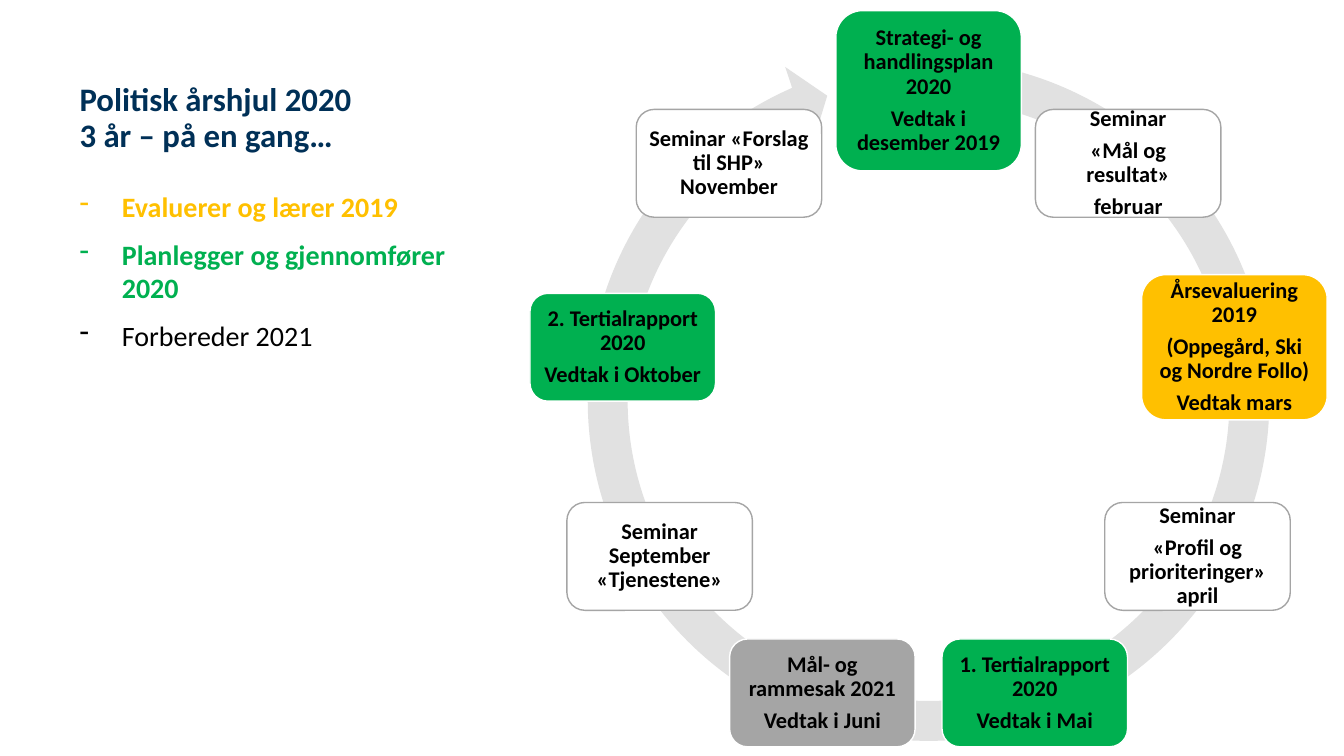
import math
from lxml import etree
from pptx import Presentation
from pptx import util as u
from pptx.dml.color import RGBColor
from pptx.enum import shapes, text
from pptx.oxml import ns

WIDTH, HEIGHT = 13.33, 7.5
FONT = "Calibri"
COLORS = {
    "navy": "003057", "yellow": "FFC000", "green": "00B050", "gray": "A5A5A5",
    "ring": "E1E1E1", "black": "000000", "white": "FFFFFF",
}
TITLE = ["Politisk årshjul 2020", "3 år – på en gang…"]
GOALS = [
    ("Evaluerer og lærer 2019", "yellow", True),
    ("Planlegger og gjennomfører 2020", "green", True),
    ("Forbereder 2021", "black", False),
]
CARD_WIDTH, CARD_HEIGHT = 1.84, 1.07
# Clockwise from the top: fill, height, paragraphs
MILESTONES = [
    ("green", 1.59, ["Strategi- og handlingsplan 2020", "Vedtak i desember 2019"]),
    ("white", CARD_HEIGHT, ["Seminar", "«Mål og resultat»", "februar"]),
    ("yellow", 1.44, ["Årsevaluering 2019", "(Oppegård, Ski og Nordre Follo)", "Vedtak mars"]),
    ("white", CARD_HEIGHT, ["Seminar", "«Profil og prioriteringer» april"]),
    ("green", CARD_HEIGHT, ["1. Tertialrapport 2020", "Vedtak i Mai"]),
    ("gray", CARD_HEIGHT, ["Mål- og rammesak 2021", "Vedtak i Juni"]),
    ("white", CARD_HEIGHT, ["Seminar September «Tjenestene»"]),
    ("green", CARD_HEIGHT, ["2. Tertialrapport 2020", "Vedtak i Oktober"]),
    ("white", CARD_HEIGHT, ["Seminar «Forslag til SHP» November"]),
]


def color(name):
    return RGBColor.from_string(COLORS[name])


def add_span(para, words, size, shade, bold=True):
    span = para.add_run()
    span.text = words
    span.font.name = FONT
    span.font.size = u.Pt(size)
    span.font.bold = bold
    span.font.color.rgb = color(shade)


def paragraphs(frame, items):
    """Pair each item with a paragraph, starting with the one already there."""
    for index, item in enumerate(items):
        yield (frame.add_paragraph() if index else frame.paragraphs[0]), item


def add_box(page, left, top, width, height):
    box = page.shapes.add_textbox(*map(u.Inches, (left, top, width, height)))
    box.text_frame.word_wrap = True
    return box.text_frame


def add_shape(page, kind, left, top, width, height, fill):
    shape = page.shapes.add_shape(kind, *map(u.Inches, (left, top, width, height)))
    shape.shadow.inherit = False
    shape.fill.solid()
    shape.fill.fore_color.rgb = color(fill)
    return shape


def add_title(page, left, top, width, height):
    frame = add_box(page, left, top, width, height)
    frame.vertical_anchor = text.MSO_ANCHOR.BOTTOM
    para = frame.paragraphs[0]
    para.line_spacing = 0.9
    for index, line in enumerate(TITLE):
        if index:
            para.add_line_break()
        add_span(para, line, 23.4, "navy")


def add_goals(page, left, top, width, height):
    frame = add_box(page, left, top, width, height)
    for para, (words, shade, bold) in paragraphs(frame, GOALS):
        # Hanging dash bullet
        props = para._p.get_or_add_pPr()
        props.set("marL", str(u.Inches(0.42)))
        props.set("indent", str(u.Inches(-0.42)))
        etree.SubElement(props, ns.qn("a:buChar")).set("char", "-")
        if para is not frame.paragraphs[0] and words != GOALS[0][0]:
            para.space_before = u.Pt(10)
        add_span(para, words, 20, shade, bold)


def add_card(page, left, top, width, height, fill, lines):
    card = add_shape(page, shapes.MSO_SHAPE.ROUNDED_RECTANGLE,
                     left, top, width, height, fill)
    card.line.color.rgb = color("gray" if fill == "white" else "white")
    card.line.width = u.Pt(1)
    frame = card.text_frame
    frame.word_wrap = True
    frame.vertical_anchor = text.MSO_ANCHOR.MIDDLE
    frame.margin_left = frame.margin_right = u.Inches(0.07)
    frame.margin_top = frame.margin_bottom = u.Inches(0.07)
    for para, line in paragraphs(frame, lines):
        para.alignment = text.PP_ALIGN.CENTER
        para.line_spacing = 0.9
        para.space_after = u.Pt(5.6)
        add_span(para, line, 16, "black")


def add_year_wheel(page, left, top, size):
    # Ring with arrowhead
    ring = add_shape(page, shapes.MSO_SHAPE.CIRCULAR_ARROW, left, top, size, size, "ring")
    ring.line.fill.background()
    for index, value in enumerate([0.055, 3.31, 147.65, 168.09, 0.058]):
        ring.adjustments[index] = value

    # Milestones evenly spaced around the ring
    center_x, center_y = left + size / 2, top + size / 2 + 0.01
    radius = 3.08
    for index, (fill, height, lines) in enumerate(MILESTONES):
        angle = math.tau * index / len(MILESTONES)
        add_card(page,
                 center_x + radius * math.sin(angle) - CARD_WIDTH / 2,
                 center_y - radius * math.cos(angle) - height / 2,
                 CARD_WIDTH, height, fill, lines)


def main():
    deck = Presentation()
    deck.slide_width, deck.slide_height = u.Inches(WIDTH), u.Inches(HEIGHT)
    page = deck.slides.add_slide(deck.slide_layouts[6])
    add_title(page, 0.69, 0.72, 4.19, 0.86)
    add_goals(page, 0.69, 1.83, 4.19, 4.25)
    add_year_wheel(page, 5.61, 0.37, 7.2)
    deck.save("out.pptx")


if __name__ == "__main__":
    main()
